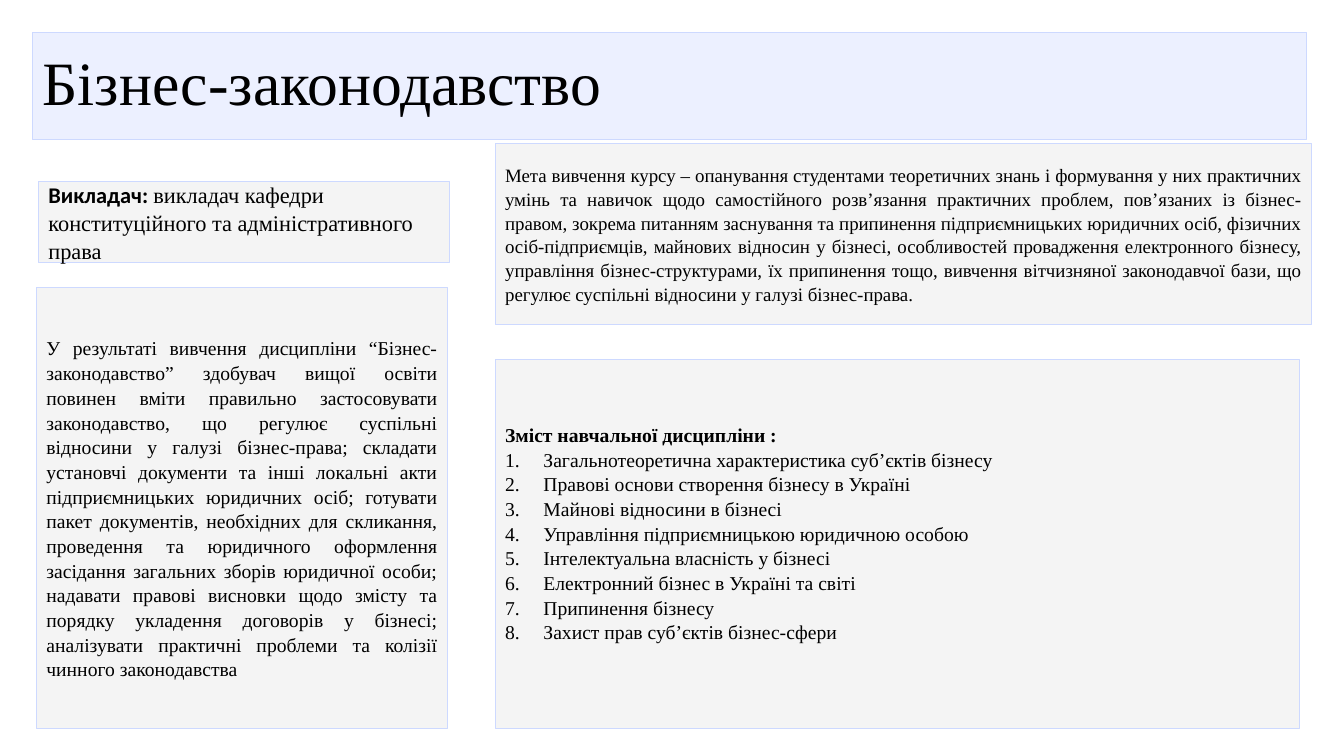
from dataclasses import dataclass

from lxml import etree
from pptx import Presentation
from pptx.dml.color import RGBColor
from pptx.enum.text import MSO_ANCHOR, MSO_AUTO_SIZE, PP_ALIGN
from pptx.oxml.ns import qn
from pptx.util import Inches, Pt

LEFT, JUSTIFY = PP_ALIGN.LEFT, PP_ALIGN.JUSTIFY
MIDDLE = MSO_ANCHOR.MIDDLE
NO_AUTOFIT = MSO_AUTO_SIZE.NONE
COMPARISON_LAYOUT = 4


@dataclass(frozen=True)
class Theme:
    ink: RGBColor = RGBColor(0x00, 0x00, 0x00)
    border: RGBColor = RGBColor(0xCD, 0xD9, 0xFF)
    title_fill: RGBColor = RGBColor(0xE5, 0xEB, 0xFF)
    panel_fill: RGBColor = RGBColor(0xF0, 0xF0, 0xF0)
    title_opacity: int = 70
    panel_opacity: int = 69
    serif: str = "Times New Roman"
    sans: str = "Calibri"
    title_size: float = 44
    teacher_size: float = 16
    body_size: float = 14
    goal_size: float = 13.5
    title_spacing: float = 0.9
    body_spacing: float = 1.05
    list_indent: float = 0.38


THEME = Theme()

COURSE = "Бізнес-законодавство"
TEACHER_LABEL = "Викладач: "
TEACHER = "викладач кафедри конституційного та адміністративного права"
GOAL = (
    "Мета вивчення курсу – опанування студентами теоретичних знань і формування у них "
    "практичних умінь та навичок щодо самостійного розв’язання практичних проблем, "
    "пов’язаних із бізнес-правом, зокрема питанням заснування та припинення "
    "підприємницьких юридичних осіб, фізичних осіб-підприємців, майнових відносин у "
    "бізнесі, особливостей провадження електронного бізнесу, управління "
    "бізнес-структурами, їх припинення тощо, вивчення вітчизняної законодавчої бази, "
    "що регулює суспільні відносини у галузі бізнес-права."
)
RESULTS = (
    "У результаті вивчення дисципліни “Бізнес-законодавство” здобувач вищої освіти "
    "повинен вміти правильно застосовувати законодавство, що регулює суспільні "
    "відносини у галузі бізнес-права; складати установчі документи та інші локальні "
    "акти підприємницьких юридичних осіб; готувати пакет документів, необхідних для "
    "скликання, проведення та юридичного оформлення засідання загальних зборів "
    "юридичної особи; надавати правові висновки щодо змісту та порядку укладення "
    "договорів у бізнесі; аналізувати практичні проблеми та колізії чинного "
    "законодавства"
)
CONTENTS_HEADING = "Зміст навчальної дисципліни :"
TOPICS = [
    "Загальнотеоретична характеристика суб’єктів бізнесу",
    "Правові основи створення бізнесу в Україні",
    "Майнові відносини в бізнесі",
    "Управління підприємницькою юридичною особою",
    "Інтелектуальна власність у бізнесі",
    "Електронний бізнес в Україні та світі",
    "Припинення бізнесу",
    "Захист прав суб’єктів бізнес-сфери",
]


def style_panel(panel, box, fill, opacity):
    """Place a placeholder in its box and give it a translucent fill and a border."""
    panel.left, panel.top, panel.width, panel.height = map(Inches, box)
    panel.fill.solid()
    panel.fill.fore_color.rgb = fill
    color = panel.fill._xPr.find(f"{qn('a:solidFill')}/{qn('a:srgbClr')}")
    etree.SubElement(color, qn("a:alpha"), val=str(opacity * 1000))
    panel.line.color.rgb = THEME.border
    panel.line.width = Pt(0.75)
    frame = panel.text_frame
    frame.word_wrap = True
    frame.auto_size = NO_AUTOFIT
    frame.vertical_anchor = MIDDLE
    return frame


def style_paragraph(paragraph, size, align=LEFT, spacing=THEME.body_spacing,
                    numbered=False, bold=False):
    """Set numbering, spacing and the font of every run."""
    indent = Inches(THEME.list_indent) if numbered else 0
    properties = paragraph._p.get_or_add_pPr()
    properties.set("marL", str(indent))
    properties.set("indent", str(-indent))
    if numbered:
        etree.SubElement(properties, qn("a:buAutoNum"), type="arabicPeriod")
    else:
        etree.SubElement(properties, qn("a:buNone"))
    paragraph.alignment = align
    paragraph.line_spacing = spacing
    paragraph.space_before = Pt(0)
    for run in paragraph.runs:
        run.font.name = THEME.serif
        run.font.size = Pt(size)
        run.font.bold = bold
        run.font.color.rgb = THEME.ink


def add_title(panel, box):
    frame = style_panel(panel, box, THEME.title_fill, THEME.title_opacity)
    frame.text = COURSE
    style_paragraph(frame.paragraphs[0], THEME.title_size, spacing=THEME.title_spacing)


def add_contents(panel, box):
    frame = style_panel(panel, box, THEME.panel_fill, THEME.panel_opacity)
    frame.margin_bottom = Inches(0.28)
    frame.text = "\n".join([CONTENTS_HEADING, *TOPICS])
    heading, *topics = frame.paragraphs
    style_paragraph(heading, THEME.body_size, bold=True)
    for topic in topics:
        style_paragraph(topic, THEME.body_size, numbered=True)


def add_teacher(panel, box):
    frame = style_panel(panel, box, THEME.panel_fill, THEME.panel_opacity)
    line = frame.paragraphs[0]
    label = line.add_run()
    label.text = TEACHER_LABEL
    line.add_run().text = TEACHER
    style_paragraph(line, THEME.teacher_size)
    label.font.name = THEME.sans
    label.font.bold = True


def add_prose(panel, box, prose, size):
    frame = style_panel(panel, box, THEME.panel_fill, THEME.panel_opacity)
    frame.text = prose
    style_paragraph(frame.paragraphs[0], size, align=JUSTIFY)


def main():
    deck = Presentation()
    deck.slide_width, deck.slide_height = Inches(13.33), Inches(7.5)
    slide = deck.slides.add_slide(deck.slide_layouts[COMPARISON_LAYOUT])
    title, contents, teacher, results, goal = slide.placeholders

    # Title band
    add_title(title, (0.32, 0.32, 12.64, 1.06))
    # Left column: teacher and learning results
    add_teacher(teacher, (0.38, 1.8, 4.08, 0.8))
    add_prose(results, (0.36, 2.85, 4.08, 4.38), RESULTS, THEME.body_size)
    # Right column: course goal and contents
    add_prose(goal, (4.91, 1.42, 8.1, 1.8), GOAL, THEME.goal_size)
    add_contents(contents, (4.91, 3.57, 7.98, 3.66))

    deck.save("out.pptx")


if __name__ == "__main__":
    main()
